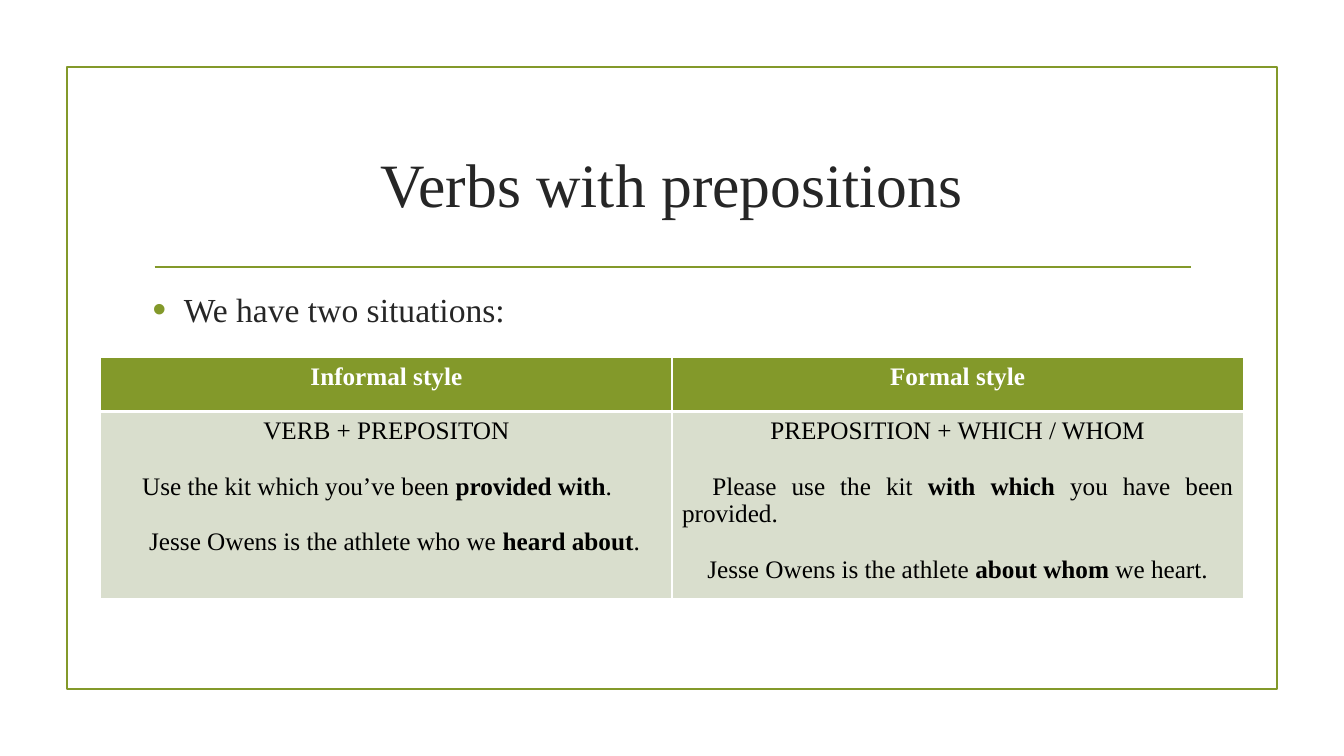
from lxml import etree
from pptx import Presentation
from pptx.dml.color import RGBColor
from pptx.enum.shapes import MSO_CONNECTOR, MSO_SHAPE
from pptx.enum.text import MSO_ANCHOR, PP_ALIGN
from pptx.oxml.ns import qn
from pptx.util import Inches, Pt

CENTER, JUSTIFY, LEFT = PP_ALIGN.CENTER, PP_ALIGN.JUSTIFY, PP_ALIGN.LEFT
TOP, MIDDLE = MSO_ANCHOR.TOP, MSO_ANCHOR.MIDDLE
RECTANGLE, STRAIGHT = MSO_SHAPE.RECTANGLE, MSO_CONNECTOR.STRAIGHT
FONT = "Times New Roman"
OLIVE = RGBColor(0x83, 0x99, 0x2A)
PALE = RGBColor(0xD9, 0xDE, 0xCD)
DARK = RGBColor(0x26, 0x26, 0x26)
BLACK = RGBColor(0, 0, 0)
WHITE = RGBColor(0xFF, 0xFF, 0xFF)
COLS, ROWS = 40, 22.5

# Each paragraph: alignment, first-line indent in inches, (text, bold) runs
INFORMAL = [
    (CENTER, 0, [("VERB + PREPOSITON", False)]),
    (JUSTIFY, 0.31, [("Use the kit which you’ve been ", False),
                     ("provided with", True), (".", False)]),
    (JUSTIFY, 0.38, [("Jesse Owens is the athlete who we ", False),
                     ("heard about", True), (".", False)]),
]
FORMAL = [
    (CENTER, 0, [("PREPOSITION + WHICH / WHOM", False)]),
    (JUSTIFY, 0.3, [("Please use the kit ", False), ("with which ", True),
                    ("you have been provided.", False)]),
    (CENTER, 0, [("Jesse Owens is the athlete ", False), ("about whom ", True),
                 ("we heart.", False)]),
]
STYLES = [("Informal style", INFORMAL), ("Formal style", FORMAL)]


def grid(*cells):
    """Turn grid units (a third of an inch, 40 by 22.5) into lengths."""
    return [Inches(c / 3) for c in cells]


def write(p, text, size=18, color=BLACK, bold=False, align=LEFT):
    p.alignment = align
    r = p.add_run()
    r.text = text
    r.font.name, r.font.size, r.font.bold = FONT, Pt(size), bold
    r.font.color.rgb = color


def set_indent(p, first, left=0):
    pPr = p._p.get_or_add_pPr()
    pPr.set("marL", str(Inches(left)))
    pPr.set("indent", str(Inches(first)))
    return pPr


def add_bullet(p):
    pPr = set_indent(p, -0.31, 0.31)
    color = etree.SubElement(pPr, qn("a:buClr"))
    etree.SubElement(color, qn("a:srgbClr"), val=str(OLIVE))
    etree.SubElement(pPr, qn("a:buSzPct"), val="115000")
    etree.SubElement(pPr, qn("a:buFont"), typeface="Arial")
    etree.SubElement(pPr, qn("a:buChar"), char="•")


def add_text_box(s, box, anchor):
    """Add a wrapping text box and return its first paragraph."""
    tf = s.shapes.add_textbox(*grid(*box)).text_frame
    tf.word_wrap = True
    tf.vertical_anchor = anchor
    return tf.paragraphs[0]


def add_frame(s, box):
    sp = s.shapes.add_shape(RECTANGLE, *grid(*box))
    sp.shadow.inherit = False
    sp.fill.background()
    sp.line.color.rgb, sp.line.width = OLIVE, Pt(1.25)


def add_rule(s, ends):
    line = s.shapes.add_connector(STRAIGHT, *grid(*ends))
    line.line.color.rgb, line.line.width = OLIVE, Pt(1.25)
    etree.SubElement(line._element.spPr, qn("a:effectLst"))


def style_cell(cell, fill, bottom):
    """Fill a cell and give it white borders; bottom is a width in points."""
    cell.fill.solid()
    cell.fill.fore_color.rgb = fill
    tcPr = cell._tc.get_or_add_tcPr()
    widths = {"a:lnL": 1, "a:lnR": 1, "a:lnT": 1, "a:lnB": bottom}
    for i, (tag, width) in enumerate(widths.items()):
        ln = etree.Element(qn(tag), w=str(Pt(width)))
        solid = etree.SubElement(ln, qn("a:solidFill"))
        etree.SubElement(solid, qn("a:srgbClr"), val=str(WHITE))
        tcPr.insert(i, ln)


def fill_examples(cell, paragraphs):
    tf = cell.text_frame
    for i, (align, indent, runs) in enumerate(paragraphs):
        p = tf.add_paragraph() if i else tf.paragraphs[0]
        if i:
            p.space_before = Pt(20)
        set_indent(p, indent)
        for text, bold in runs:
            write(p, text, bold=bold, align=align)


def add_style_table(s, box, row_heights):
    table = s.shapes.add_table(len(row_heights), len(STYLES), *grid(*box)).table
    for row, height in zip(table.rows, grid(*row_heights)):
        row.height = height
    for col, (heading, examples) in enumerate(STYLES):
        head, body = table.cell(0, col), table.cell(1, col)
        style_cell(head, OLIVE, bottom=3)
        write(head.text_frame.paragraphs[0], heading, color=WHITE, bold=True,
              align=CENTER)
        style_cell(body, PALE, bottom=1)
        fill_examples(body, examples)


def main():
    prs = Presentation()
    prs.slide_width, prs.slide_height = grid(COLS, ROWS)
    s = prs.slides.add_slide(prs.slide_layouts[6])
    add_frame(s, (2, 2, COLS - 4, 18.5))
    add_rule(s, (4.6, 7.95, 35.45, 7.95))
    title = add_text_box(s, (4.25, 3.3, 31.5, 4.3), MIDDLE)
    write(title, "Verbs with prepositions", size=44, color=DARK, align=CENTER)
    intro = add_text_box(s, (4.25, 8.45, 31.5, 1.6), TOP)
    add_bullet(intro)
    write(intro, "We have two situations:", size=24, color=DARK)
    add_style_table(s, (3, 10.65, COLS - 6, 6.85), (1.6, 5.25))
    prs.save("out.pptx")


if __name__ == "__main__":
    main()
